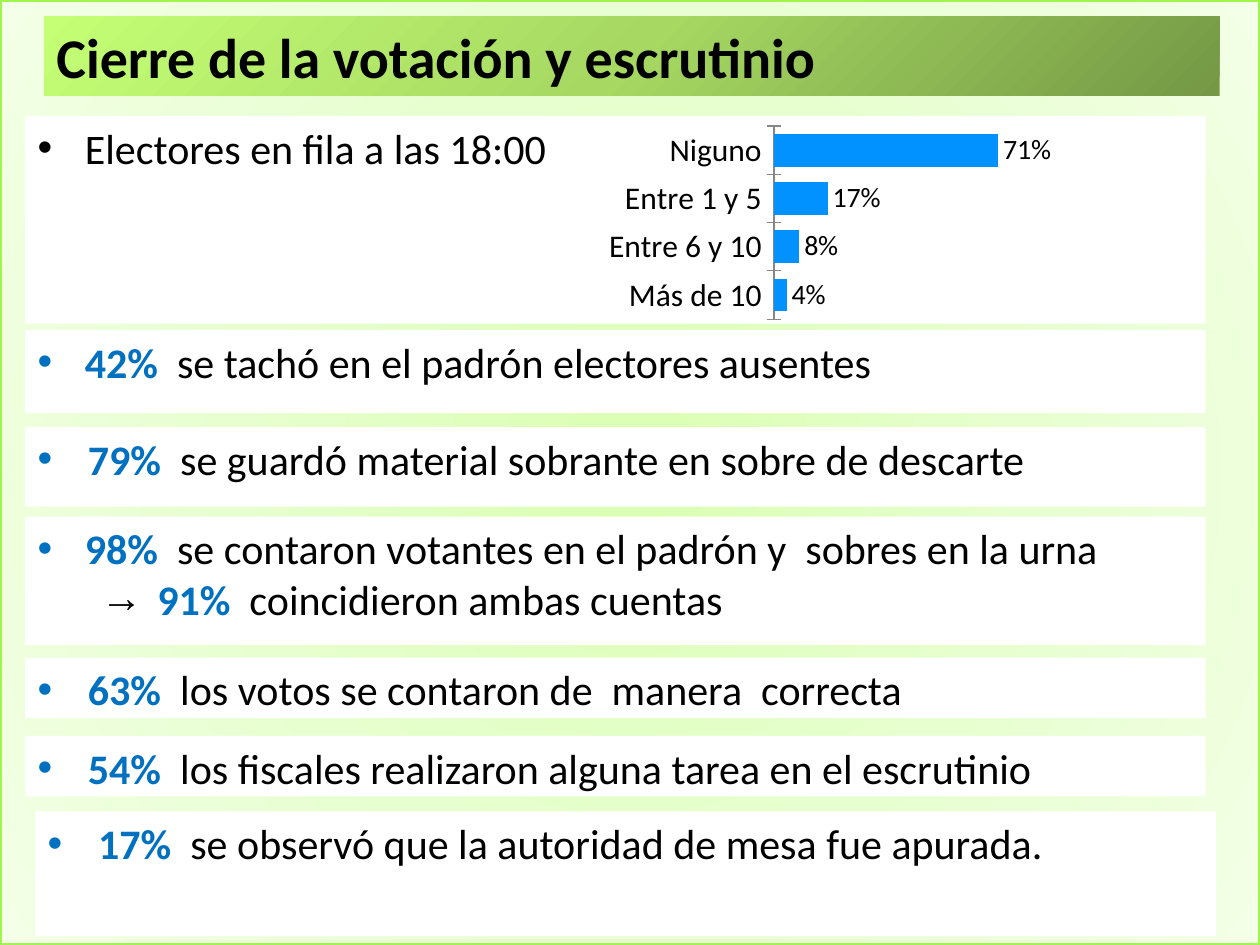
import pptx
import pptx.chart.data
import pptx.dml.color
import pptx.enum.chart
import pptx.enum.shapes
import pptx.enum.text
import pptx.oxml
import pptx.oxml.ns
import pptx.util

Pt = pptx.util.Pt
FONT = "Calibri"
BLACK, WHITE, BLUE = "000000", "FFFFFF", "0070C0"
NS = pptx.oxml.ns.nsdecls("a", "c")


def color(value):
    return pptx.dml.color.RGBColor.from_string(value)


def add_rect(slide, box, fill=None):
    sp = slide.shapes.add_shape(
        pptx.enum.shapes.MSO_SHAPE.RECTANGLE, *(Pt(v) for v in box))
    sp.shadow.inherit = False
    sp.line.fill.background()
    if fill:
        sp.fill.solid()
        sp.fill.fore_color.rgb = color(fill)
    tf = sp.text_frame
    tf.word_wrap = True
    tf.vertical_anchor = pptx.enum.text.MSO_ANCHOR.TOP
    return sp


def set_gradient(sp, stops, direction):
    """Fill with (percent, colour) stops; direction is the a:lin or a:path XML."""
    sp.fill.background()
    stop_xml = "".join(
        f'<a:gs pos="{pos * 1000}"><a:srgbClr val="{value}"/></a:gs>'
        for pos, value in stops)
    grad = pptx.oxml.parse_xml(
        f'<a:gradFill {NS} rotWithShape="1"><a:gsLst>{stop_xml}</a:gsLst>'
        f'{direction}</a:gradFill>')
    props = sp._element.spPr
    props.replace(props.find(pptx.oxml.ns.qn("a:noFill")), grad)


def add_background(slide, box):
    sp = add_rect(slide, box)
    set_gradient(
        sp, [(0, "DAFFB2"), (50, "E7FFCF"), (100, "F3FFE7")],
        '<a:path path="circle"><a:fillToRect l="50000" t="50000" '
        'r="50000" b="50000"/></a:path>')
    sp.line.color.rgb = color("A1F44E")
    sp.line.width = Pt(2)


def set_font(font, size, value=BLACK, bold=False):
    font.name = FONT
    font.size = Pt(size)
    font.bold = bold
    font.color.rgb = color(value)


def add_title(slide, box, text):
    sp = add_rect(slide, box)
    set_gradient(sp, [(0, "749845"), (50, "A6D862"), (100, "C4FF75")],
                 '<a:lin ang="13500000" scaled="0"/>')
    p = sp.text_frame.paragraphs[0]
    p.text = text
    p.alignment = pptx.enum.text.PP_ALIGN.LEFT
    set_font(p.font, 32, bold=True)


def set_bullet(p, char, left, hanging):
    props = p._p.get_or_add_pPr()
    props.set("marL", str(Pt(left)))
    props.set("indent", str(-Pt(hanging)))
    props.append(pptx.oxml.parse_xml(f'<a:buFont {NS} typeface="Arial"/>'))
    props.append(pptx.oxml.parse_xml(f'<a:buChar {NS} char="{char}"/>'))


def add_finding(slide, box, hanging, lines):
    """White band; each line is (lead, percentage, text), later lines are sub-points."""
    tf = add_rect(slide, box, WHITE).text_frame
    for i, (lead, percent, text) in enumerate(lines):
        p = tf.add_paragraph() if i else tf.paragraphs[0]
        p.alignment = pptx.enum.text.PP_ALIGN.LEFT
        p.level = min(i, 1)
        set_bullet(p, "→" if i else "•", hanging + 36 * p.level, hanging)
        for part, value, bold in ((lead, BLACK, False), (percent, BLUE, True),
                                  (text, BLACK, False)):
            if part:
                r = p.add_run()
                r.text = part
                set_font(r.font, 24, value, bold)


def add_queue_chart(slide, box):
    data = pptx.chart.data.CategoryChartData(number_format="0%")
    data.categories = ["Más de 10", "Entre 6 y 10", "Entre 1 y 5", "Niguno"]
    data.add_series("Electores en fila", [0.04, 0.08, 0.17, 0.71])
    chart = slide.shapes.add_chart(
        pptx.enum.chart.XL_CHART_TYPE.BAR_CLUSTERED,
        *(Pt(v) for v in box), data).chart
    chart.has_legend = False
    chart.has_title = False
    set_font(chart.font, 10)

    axis = chart.category_axis
    axis.major_tick_mark = pptx.enum.chart.XL_TICK_MARK.CROSS
    axis.format.line.color.rgb = color("868686")
    set_font(axis.tick_labels.font, 18)
    values = chart.value_axis
    values.minimum_scale, values.maximum_scale = 0, 1
    values.has_major_gridlines = False
    values.visible = False

    plot = chart.plots[0]
    plot.gap_width = 47
    plot.vary_by_categories = False
    fill = plot.series[0].format.fill
    fill.solid()
    fill.fore_color.rgb = color("0192FF")
    plot.has_data_labels = True
    labels = plot.data_labels
    labels.show_value = True
    labels.number_format = "0%"
    labels.number_format_is_linked = False
    labels.position = pptx.enum.chart.XL_LABEL_POSITION.OUTSIDE_END
    set_font(labels.font, 16)

    area = chart._chartSpace.chart.plotArea
    for old in area.findall(pptx.oxml.ns.qn("c:layout")):
        area.remove(old)
    sizes = "".join(f'<c:{k} val="{v}"/>' for k, v in
                    (("x", 0.35), ("y", 0.02), ("w", 0.63), ("h", 0.97)))
    area.insert(0, pptx.oxml.parse_xml(
        f'<c:layout {NS}><c:manualLayout><c:layoutTarget val="inner"/>'
        f'<c:xMode val="edge"/><c:yMode val="edge"/>{sizes}'
        '</c:manualLayout></c:layout>'))


def main():
    prs = pptx.Presentation()
    prs.slide_width, prs.slide_height = Pt(720), Pt(540)
    slide = prs.slides.add_slide(prs.slide_layouts[6])
    add_background(slide, (0, 0, 720, 540))
    add_title(slide, (25.2, 9.4, 671.8, 45.4), "Cierre de la votación y escrutinio")

    left, width = 14.4, 674.6
    narrow, wide = 27, 28.8
    findings = [
        (left, 66.2, 118.8, narrow, [("", "", "Electores en fila a las 18:00")]),
        (left, 188.6, 47.5, narrow,
         [("", "42% ", " se tachó en el padrón electores ausentes")]),
        (left, 244.1, 45.4, wide,
         [("", "79% ", " se guardó material sobrante en sobre de descarte")]),
        (left, 295.2, 73.4, narrow,
         [("", "98% ", " se contaron votantes en el padrón y  sobres en la urna"),
          (" ", "91% ", " coincidieron ambas cuentas")]),
        (left, 375.8, 34.6, wide,
         [("", "63% ", " los votos se contaron de  manera  correcta")]),
        (left, 420.5, 34.6, wide,
         [("", "54% ", " los fiscales realizaron alguna tarea en el escrutinio")]),
        (left + 5.8, 463.7, 71.3, wide,
         [("", "17% ", " se observó que la autoridad de mesa fue apurada.")]),
    ]
    for x, y, height, hanging, lines in findings:
        add_finding(slide, (x, y, width, height), hanging, lines)
    add_queue_chart(slide, (342, 69.8, 286.6, 113.8))
    prs.save("out.pptx")


if __name__ == "__main__":
    main()
